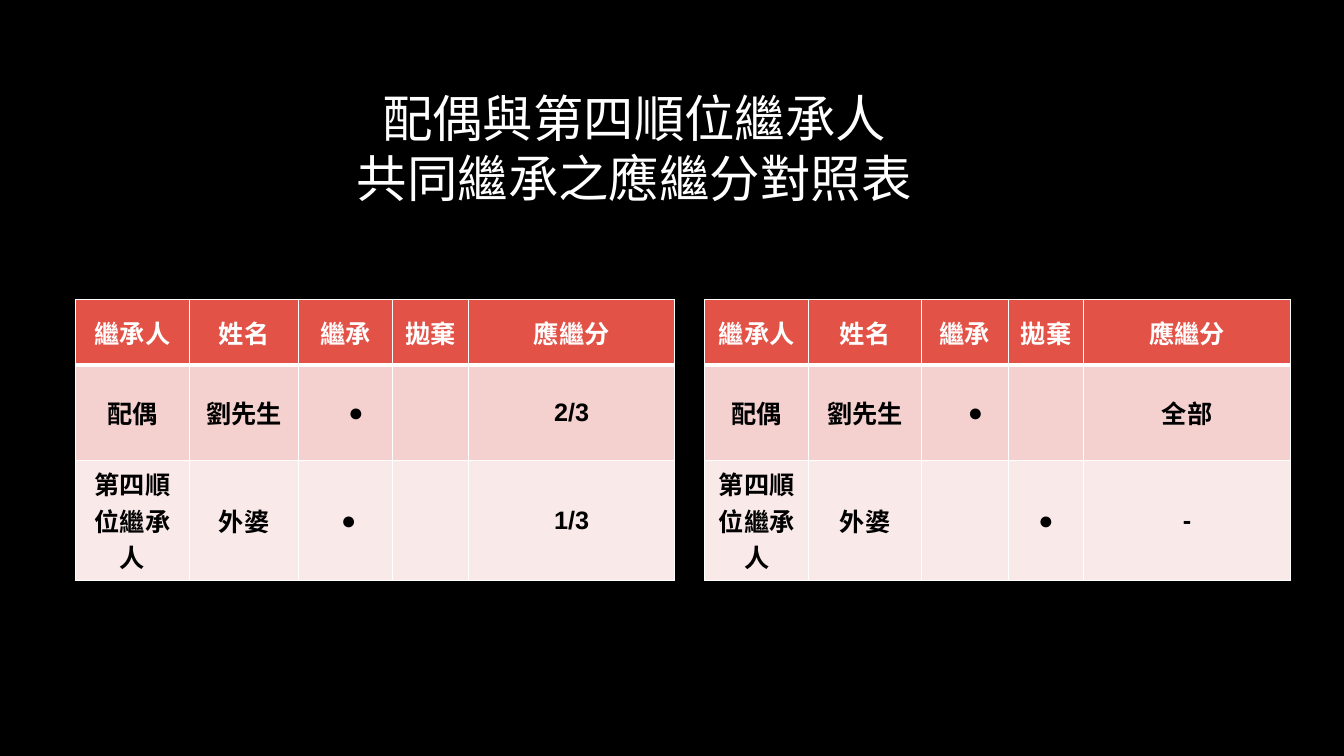
from lxml.etree import SubElement
from pptx import Presentation
from pptx.dml.color import RGBColor
from pptx.enum.text import MSO_ANCHOR, MSO_AUTO_SIZE, PP_ALIGN
from pptx.oxml.ns import qn
from pptx.util import Inches, Pt

BLACK = RGBColor(0x00, 0x00, 0x00)
WHITE = RGBColor(0xFF, 0xFF, 0xFF)
RED = RGBColor(0xE2, 0x52, 0x47)
ROSE = RGBColor(0xF4, 0xD1, 0xCF)
PALE = RGBColor(0xFA, 0xE9, 0xE9)

TITLE = "配偶與第四順位繼承人\n共同繼承之應繼分對照表"
HEAD = ("繼承人", "姓名", "繼承", "拋棄", "應繼分")
TABLES = [
    {
        "left": 0.75,
        "cols": (1.13, 1.08, 0.93, 0.76, 2.04),
        "rows": (HEAD,
                 ("配偶", "劉先生", "●", "", "2/3"),
                 ("第四順位繼承人", "外婆", "●", "", "1/3")),
        "shift": {(1, 2): 0.21, (2, 2): 0.07},
    },
    {
        "left": 6.99,
        "cols": (1.03, 1.12, 0.86, 0.75, 2.05),
        "rows": (HEAD,
                 ("配偶", "劉先生", "●", "", "全部"),
                 ("第四順位繼承人", "外婆", "", "●", "-")),
        "shift": {(1, 2): 0.21},
    },
]
TOP = 2.97
HEIGHTS = (0.65, 0.95, 1.03)
FILLS = (RED, ROSE, PALE)
INKS = (WHITE, BLACK, BLACK)
RULES = (1, 3, 1, 1)
PAD = 0.11


def style(para, font, size, ink, bold):
    para.alignment = PP_ALIGN.CENTER
    for run in para.runs:
        run.font.name = font
        run.font.size = Pt(size)
        run.font.bold = bold
        run.font.color.rgb = ink


def border(cell, row):
    props = cell._tc.get_or_add_tcPr()
    widths = {"L": 1, "R": 1, "T": RULES[row], "B": RULES[row + 1]}
    for side, width in widths.items():
        line = SubElement(props, qn(f"a:ln{side}"), w=str(Pt(width)))
        fill = SubElement(line, qn("a:solidFill"))
        SubElement(fill, qn("a:srgbClr"), val=str(WHITE))


def add_grid(slide, data):
    cols, rows = data["cols"], data["rows"]
    grid = slide.shapes.add_table(
        len(rows), len(cols), Inches(data["left"]), Inches(TOP),
        Inches(sum(cols)), Inches(sum(HEIGHTS))).table
    for col, width in zip(grid.columns, cols):
        col.width = Inches(width)
    for r, texts in enumerate(rows):
        grid.rows[r].height = Inches(HEIGHTS[r])
        for c, text in enumerate(texts):
            cell = grid.cell(r, c)
            border(cell, r)
            cell.fill.solid()
            cell.fill.fore_color.rgb = FILLS[r]
            cell.vertical_anchor = MSO_ANCHOR.MIDDLE
            cell.margin_left = Inches(PAD + data["shift"].get((r, c), 0))
            cell.margin_right = Inches(PAD)
            cell.margin_top = cell.margin_bottom = Inches(0.05)
            cell.text_frame.text = text
            style(cell.text_frame.paragraphs[0], "Arial", 18, INKS[r], True)


def main():
    deck = Presentation()
    deck.slide_width, deck.slide_height = Inches(13.33), Inches(7.5)
    slide = deck.slides.add_slide(deck.slide_layouts[5])
    slide.background.fill.solid()
    slide.background.fill.fore_color.rgb = BLACK

    title = slide.shapes.title
    title.left, title.top = Inches(0.75), Inches(0.67)
    title.width, title.height = Inches(11.08), Inches(1.59)
    frame = title.text_frame
    frame.auto_size = MSO_AUTO_SIZE.NONE
    frame.vertical_anchor = MSO_ANCHOR.MIDDLE
    para = frame.paragraphs[0]
    para.text = TITLE.replace("\n", "\v")
    para.line_spacing = Pt(43)
    style(para, "Calibri", 36, WHITE, False)

    for data in TABLES:
        add_grid(slide, data)
    deck.save("out.pptx")


if __name__ == "__main__":
    main()
